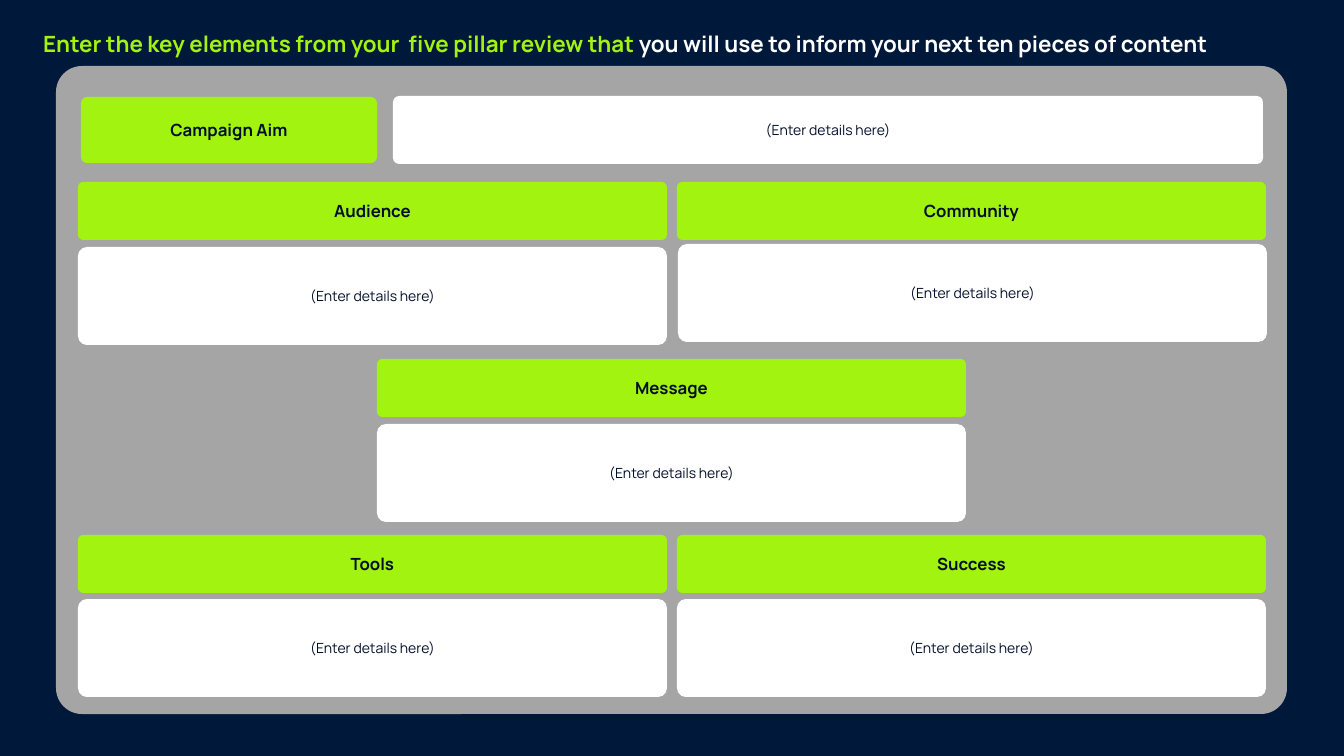
import pptx
import pptx.dml.color
import pptx.enum.shapes
import pptx.enum.text
import pptx.util

# Content
TITLE_RUNS = [
    ("Enter the key elements from your  five pillar review that ", "A2F30F"),
    ("you will use to inform your next ten pieces of content", "FFFFFF"),
]
PROMPT = "(Enter details here)"
AIM = "Campaign Aim"
# Heading, left, top, then the left and top of its details box in px
PILLARS = [
    ("Audience", 78, 182, 78, 247),
    ("Community", 677, 182, 678, 244),
    ("Message", 377, 359, 377, 424),
    ("Tools", 78, 535, 78, 599),
    ("Success", 677, 535, 677, 599),
]

# Style and measures in px
FONT = "Manrope"
NAVY, GREY, GREEN, WHITE, INK = "00183A", "A5A5A5", "A2F30F", "FFFFFF", "000E2A"
SLIDE_WIDTH, SLIDE_HEIGHT = 1344, 756
EMU_PER_PX = 12192000 / SLIDE_WIDTH
PILLAR_WIDTH, HEADING_HEIGHT, DETAILS_HEIGHT = 589, 58, 98
BOX_INSET = 10


def px(length):
    return pptx.util.Emu(round(length * EMU_PER_PX))


def color(value):
    return pptx.dml.color.RGBColor.from_string(value)


def format_run(run, size, bold, value):
    run.font.name = FONT
    run.font.size = pptx.util.Pt(size)
    run.font.bold = bold
    run.font.color.rgb = color(value)


def add_panel(slide, left, top, width, height, fill, rounding):
    shape = slide.shapes.add_shape(
        pptx.enum.shapes.MSO_SHAPE.ROUNDED_RECTANGLE,
        px(left), px(top), px(width), px(height))
    shape.adjustments[0] = rounding
    shape.shadow.inherit = False
    shape.fill.solid()
    shape.fill.fore_color.rgb = color(fill)
    shape.line.fill.background()
    return shape


def add_box(slide, text, left, top, width, height, fill, size, bold):
    frame = add_panel(slide, left, top, width, height, fill, 0.09).text_frame
    frame.word_wrap = True
    frame.vertical_anchor = pptx.enum.text.MSO_ANCHOR.MIDDLE
    frame.margin_left = frame.margin_right = px(BOX_INSET)
    frame.margin_top = frame.margin_bottom = px(BOX_INSET)
    frame.text = text
    paragraph = frame.paragraphs[0]
    paragraph.alignment = pptx.enum.text.PP_ALIGN.CENTER
    format_run(paragraph.runs[0], size, bold, INK)


def add_heading(slide, text, left, top, width, height):
    add_box(slide, text, left, top, width, height, GREEN, 12, True)


def add_details(slide, left, top, width, height):
    add_box(slide, PROMPT, left, top, width, height, WHITE, 10, False)


def add_title(slide):
    title = slide.shapes.title
    title.left, title.top, title.width, title.height = px(33), px(25), px(1272), px(37)
    frame = title.text_frame
    frame.word_wrap = True
    frame.auto_size = pptx.enum.text.MSO_AUTO_SIZE.SHAPE_TO_FIT_TEXT
    frame.vertical_anchor = pptx.enum.text.MSO_ANCHOR.TOP
    frame.margin_left = frame.margin_right = px(10)
    frame.margin_top = frame.margin_bottom = px(5)
    paragraph = frame.paragraphs[0]
    paragraph.alignment = pptx.enum.text.PP_ALIGN.LEFT
    for text, value in TITLE_RUNS:
        run = paragraph.add_run()
        run.text = text
        format_run(run, 16, True, value)


def main():
    presentation = pptx.Presentation()
    presentation.slide_width = px(SLIDE_WIDTH)
    presentation.slide_height = px(SLIDE_HEIGHT)
    slide = presentation.slides.add_slide(
        presentation.slide_layouts.get_by_name("Title Only"))
    slide.background.fill.solid()
    slide.background.fill.fore_color.rgb = color(NAVY)

    # Title and grey backdrop
    add_title(slide)
    add_panel(slide, 56, 66, 1231, 648, GREY, 0.04)

    # Campaign aim row
    add_heading(slide, AIM, 81, 97, 296, 66)
    add_details(slide, 393, 96, 870, 68)

    # Five pillars, each a heading above its details
    for heading, left, top, details_left, details_top in PILLARS:
        add_heading(slide, heading, left, top, PILLAR_WIDTH, HEADING_HEIGHT)
        add_details(slide, details_left, details_top, PILLAR_WIDTH, DETAILS_HEIGHT)

    presentation.save("out.pptx")


if __name__ == "__main__":
    main()
